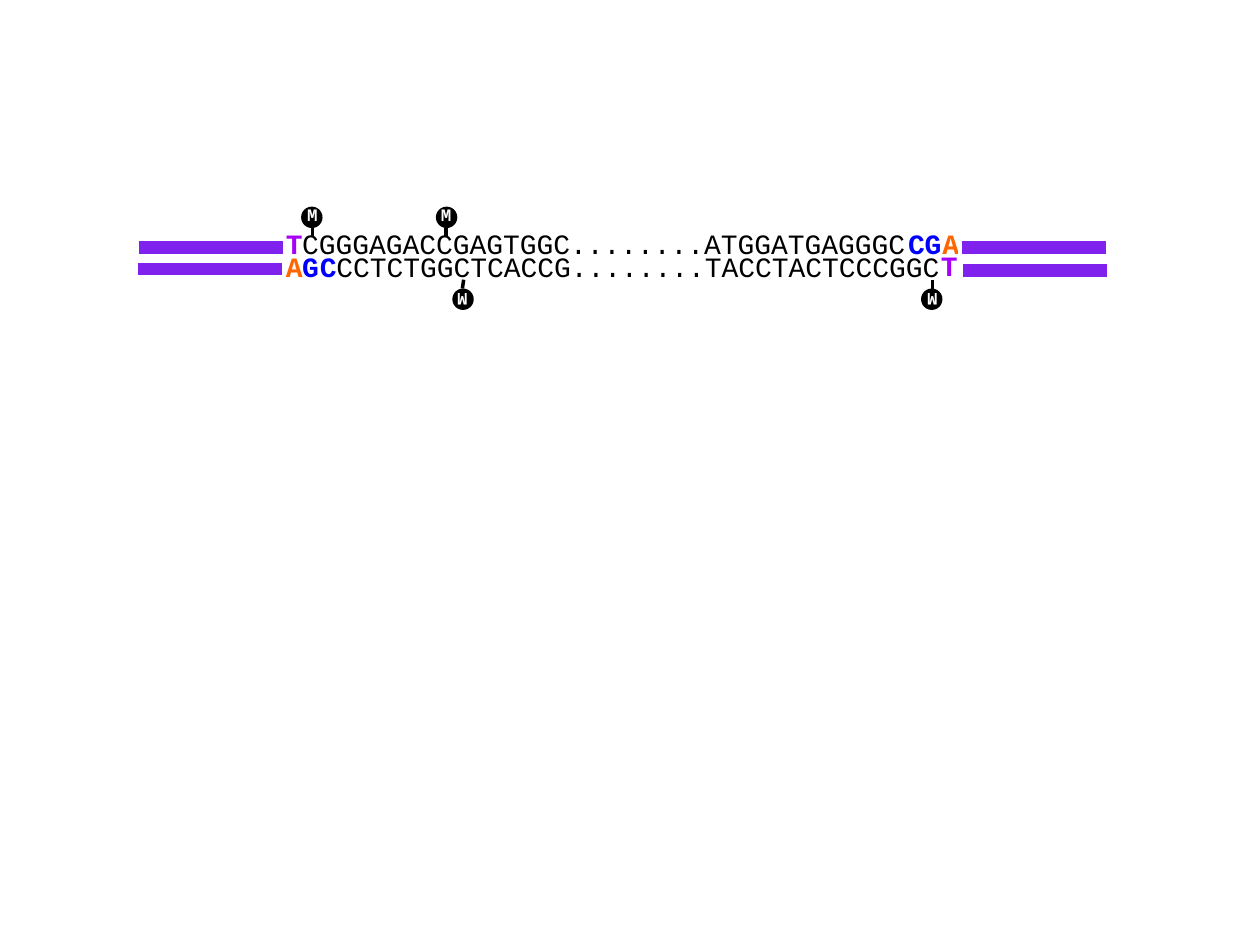
from dataclasses import dataclass

from lxml import etree
from pptx import Presentation
from pptx.dml.color import RGBColor
from pptx.enum import shapes, text
from pptx.oxml import ns
from pptx.util import Inches, Pt


@dataclass(frozen=True)
class Theme:
    font: str = "Courier New"
    base_size: int = 16
    mark_size: int = 10
    line_width: int = 2
    black: str = "000000"
    white: str = "FFFFFF"
    bar: str = "7F22ED"
    orange: str = "FF6600"
    purple: str = "A800F7"
    blue: str = "0000FF"


theme = Theme()


def add_text(group, wording, left, top, width, height, size, color, bold=True):
    box = group.shapes.add_textbox(Inches(left), Inches(top), Inches(width), Inches(height))
    frame = box.text_frame
    frame.word_wrap = True
    frame.auto_size = text.MSO_AUTO_SIZE.SHAPE_TO_FIT_TEXT
    frame.text = wording
    font = frame.paragraphs[0].runs[0].font
    font.name = theme.font
    font.size = Pt(size)
    font.bold = bold
    font.color.rgb = RGBColor.from_string(color)
    return box


def add_filled(group, kind, left, top, width, height, color):
    shape = group.shapes.add_shape(kind, Inches(left), Inches(top), Inches(width), Inches(height))
    shape.shadow.inherit = False
    shape.fill.solid()
    shape.fill.fore_color.rgb = RGBColor.from_string(color)
    shape.line.fill.background()
    return shape


deck = Presentation()
deck.slide_width = Inches(10)
deck.slide_height = Inches(7.5)
page = deck.slides.add_slide(deck.slide_layouts[6])

upper_mark = {"disc_top": 1.64, "label_top": 1.57, "stem": (1.81, 1.87), "rotation": 0}
lower_mark = {"disc_top": 2.29, "label_top": 2.25, "stem": (2.29, 2.22), "rotation": 180}

strands = [
    (upper_mark, [
        ("base", "A", 7.38, 1.75, 0.62, theme.orange),
        ("bar", 1.09, 1.9),
        ("base", "T", 2.17, 1.75, 0.46, theme.purple),
        ("sequence", "CGGGAGACCGAGTGGC........ATGGATGAGGGC", 1.75, 0.1),
        ("mark", 2.39, 2.25, 2.48, 2.48),
        ("mark", 3.46, 3.31, 3.54, 3.54),
        ("base", "C", 7.11, 1.75, 0.47, theme.blue),
        ("base", "G", 7.24, 1.75, 0.62, theme.blue),
        ("bar", 7.62, 1.9),
    ]),
    (lower_mark, [
        ("base", "A", 2.17, 1.93, 0.62, theme.orange),
        ("sequence", "CCTCTGGCTCACCG........TACCTACTCCCGGC", 1.93, 0.37),
        ("mark", 3.59, 3.44, 3.67, 3.68),
        ("mark", 7.31, 7.17, 7.4, 7.4),
        ("base", "G", 2.3, 1.93, 0.62, theme.blue),
        ("base", "C", 2.44, 1.93, 0.47, theme.blue),
        ("bar", 7.63, 2.08),
        ("base", "T", 7.37, 1.92, 0.46, theme.purple),
        ("bar", 1.08, 2.07),
    ]),
]

for mark, parts in strands:
    group = page.shapes.add_group_shape()
    for kind, *values in parts:
        if kind == "bar":
            left, top = values
            bar = add_filled(group, shapes.MSO_SHAPE.RECTANGLE, left, top, 1.17, 0.13, theme.bar)
            bar.line.color.rgb = RGBColor.from_string(theme.white)
            bar.line.width = Pt(theme.line_width)
        elif kind == "base":
            letter, left, top, width, color = values
            add_text(group, letter, left, top, width, 0.37, theme.base_size, color)
        elif kind == "sequence":
            letters, top, inset = values
            sequence = add_text(
                group, letters, 2.3, top, 5.33, 0.37, theme.base_size, theme.black, False
            )
            sequence.text_frame.margin_left = Inches(inset)
        else:
            disc_left, label_left, stem_start, stem_end = values
            disc = add_filled(
                group, shapes.MSO_SHAPE.OVAL, disc_left, mark["disc_top"], 0.17, 0.17, theme.black
            )
            disc.rotation = mark["rotation"]
            label = add_text(
                group, "M", label_left, mark["label_top"], 0.46, 0.27, theme.mark_size, theme.white
            )
            label.text_frame.paragraphs[0].alignment = text.PP_ALIGN.CENTER
            label.rotation = mark["rotation"]
            start_top, end_top = mark["stem"]
            stem = group.shapes.add_connector(
                shapes.MSO_CONNECTOR.STRAIGHT,
                Inches(stem_start), Inches(start_top), Inches(stem_end), Inches(end_top),
            )
            stem.line.color.rgb = RGBColor.from_string(theme.black)
            stem.line.width = Pt(theme.line_width)
            etree.SubElement(stem.element.spPr, ns.qn("a:effectLst"))

deck.save("out.pptx")
